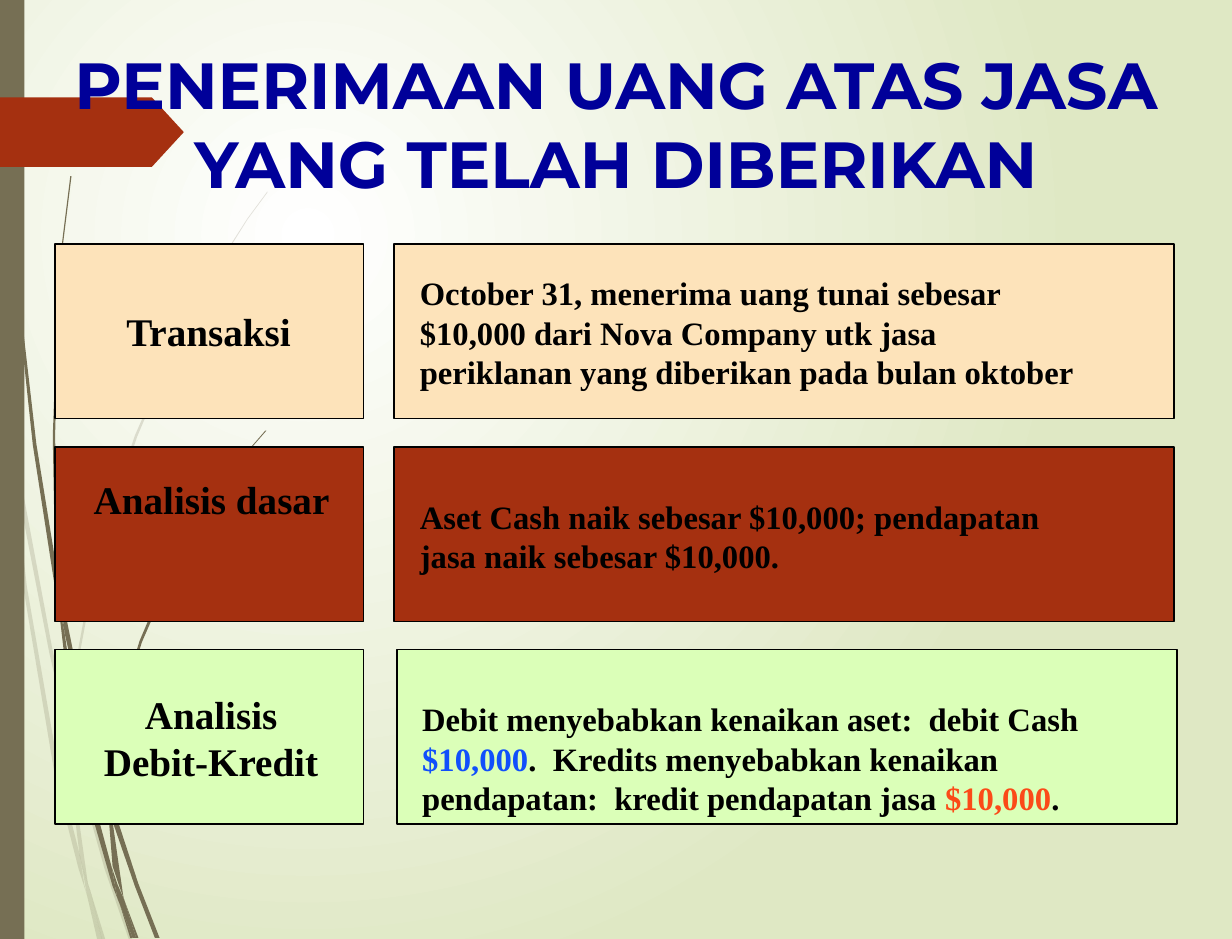
"""Build the slide on receiving cash for services already rendered."""
from lxml import etree
from pptx import Presentation
from pptx import util as u
from pptx.dml.color import RGBColor
from pptx.enum import shapes, text
from pptx.oxml import ns

WHITE = RGBColor(0xFF, 0xFF, 0xFF)
SAGE = RGBColor(0xDF, 0xE8, 0xC4)
OLIVE = RGBColor(0x76, 0x6F, 0x54)
RUST = RGBColor(0xA5, 0x30, 0x10)
NAVY = RGBColor(0x00, 0x00, 0x99)
BLACK = RGBColor(0x00, 0x00, 0x00)
CREAM = RGBColor(0xFD, 0xE3, 0xBA)
LIME = RGBColor(0xDB, 0xFF, 0xB8)
BLUE = RGBColor(0x11, 0x4F, 0xFB)
ORANGE = RGBColor(0xFB, 0x4A, 0x18)

TITLE = "PENERIMAAN UANG ATAS JASA YANG TELAH DIBERIKAN"
TITLE_FONT = {"name": "Montserrat", "size": u.Pt(40), "bold": True}
LABEL_FONT = {"name": "Times New Roman", "size": u.Pt(24), "bold": True}
BODY_FONT = {"name": "Times New Roman", "size": u.Pt(20), "bold": True}

ROWS = [
    {"fill": CREAM, "card_x": 8.53,
     "label": ["Transaksi"], "label_box": (2.46, 6.53, 4.11, 1.27),
     "body": [("October 31, menerima uang tunai sebesar $10,000 dari Nova Company utk jasa "
               "periklanan yang diberikan pada bulan oktober", BLACK)],
     "body_box": (8.84, 5.79, 15.04, 2.82)},
    {"fill": RUST, "card_x": 8.53,
     "label": ["Analisis dasar"], "label_box": (1.75, 10.16, 5.66, 1.27),
     "body": [("Aset Cash naik sebesar $10,000; pendapatan jasa naik sebesar $10,000.", BLACK)],
     "body_box": (8.84, 10.62, 15.29, 1.96)},
    {"fill": LIME, "card_x": 8.59,
     "label": ["Analisis", "Debit-Kredit"], "label_box": (1.98, 14.81, 5.18, 2.31),
     "body": [("Debit menyebabkan kenaikan aset:  debit Cash ", BLACK), ("$10,000", BLUE),
              (".  Kredits menyebabkan kenaikan pendapatan:  kredit pendapatan jasa ", BLACK),
              ("$10,000", ORANGE), (".", BLACK)],
     "body_box": (8.89, 15.01, 16.36, 2.82)},
]
ROW_TOP, ROW_STEP, ROW_H = 5.28, 4.39, 3.78
LABEL_X, LABEL_W, CARD_W = 1.19, 6.68, 16.89

WISP_UNIT = u.Cm(2.54) / 100
PALE_WISPS = [
    [(8, 373), (6, 343), (0, 300), (0, 319), (7, 367)],
    [(42, 556), (61, 639), (62, 625), (45, 555), (10, 368), (12, 401)],
    [(67, 647), (64, 635), (64, 651), (89, 740), (110, 801), (113, 801), (93, 738)],
    [(87, 801), (90, 801), (77, 759)],
    [(68, 728), (51, 661), (23, 500), (12, 401), (8, 373), (20, 501), (47, 662), (67, 740),
     (74, 762), (72, 754)],
    [(61, 639), (63, 689), (68, 729), (70, 738), (77, 759), (75, 753), (66, 689), (64, 651)],
    [(64, 623), (68, 557), (80, 493), (97, 432), (117, 372), (141, 315), (167, 262), (196, 211),
     (211, 187), (228, 164), (228, 163), (211, 186), (195, 211), (166, 261), (140, 314),
     (115, 371), (95, 431), (78, 492), (66, 557), (62, 623), (64, 635)],
    [(74, 762), (83, 801), (87, 801)],
    [(70, 738), (68, 728), (74, 762), (87, 801), (77, 759)],
]
DARK_WISPS = [
    [(6, 117), (14, 248), (28, 379), (48, 508), (49, 513), (48, 483), (31, 378), (16, 248),
     (6, 117), (4, 51), (3, 0), (2, 0), (3, 51)],
    [(76, 631), (92, 688), (92, 673), (80, 630), (65, 568), (52, 504), (55, 539)],
    [(98, 692), (95, 684), (96, 700), (115, 755), (132, 799), (136, 799), (118, 753)],
    [(95, 738), (85, 701), (63, 593), (55, 539), (49, 509), (59, 594), (81, 703), (96, 755),
     (102, 770), (100, 765)],
    [(52, 504), (50, 483), (47, 372), (50, 261), (54, 206), (61, 150), (60, 150), (53, 206),
     (49, 261), (45, 372), (47, 479)],
    [(116, 799), (118, 799), (106, 767)],
    [(49, 509), (55, 539), (52, 504), (48, 479)],
    [(96, 676), (99, 632), (108, 588), (121, 547), (138, 508), (157, 469), (178, 433), (201, 399),
     (213, 383), (227, 367), (226, 367), (213, 382), (201, 398), (177, 432), (155, 468),
     (136, 506), (119, 546), (106, 588), (96, 630), (92, 673), (96, 684)],
    [(102, 770), (111, 799), (113, 799)],
    [(92, 688), (96, 738), (101, 753), (106, 767), (105, 763), (96, 700), (94, 694)],
    [(100, 753), (95, 738), (100, 765), (102, 770), (113, 799), (116, 799), (106, 767)],
]


def cm_box(box):
    return [u.Cm(v) for v in box]


def paint(sp, color, line=None):
    sp.shadow.inherit = False
    sp.fill.solid()
    sp.fill.fore_color.rgb = color
    if line is None:
        sp.line.fill.background()
    else:
        sp.line.color.rgb = line
        sp.line.width = u.Pt(1)
    return sp


def add_box(s, box, color, line=None, kind=shapes.MSO_SHAPE.RECTANGLE):
    return paint(s.shapes.add_shape(kind, *cm_box(box)), color, line)


def add_wisp(s, points, alpha=None):
    fb = s.shapes.build_freeform(*points[0], scale=WISP_UNIT)
    fb.add_line_segments(points[1:], close=True)
    sp = paint(fb.convert_to_shape(), OLIVE)
    if alpha:
        clr = sp.element.spPr.find(".//" + ns.qn("a:srgbClr"))
        etree.SubElement(clr, ns.qn("a:alpha")).set("val", str(alpha * 1000))


def write(sp, paragraphs, font, align, wrap=True):
    tf = sp.text_frame
    tf.word_wrap = wrap
    tf.vertical_anchor = text.MSO_ANCHOR.TOP
    for i, runs in enumerate(paragraphs):
        p = tf.add_paragraph() if i else tf.paragraphs[0]
        p.alignment = align
        for words, color in runs:
            r = p.add_run()
            r.text = words
            r.font.color.rgb = color
            for key, value in font.items():
                setattr(r.font, key, value)


def set_background(s):
    fill = s.background.fill
    fill.gradient()
    for stop, pos, color in zip(fill.gradient_stops, (0, 1), (WHITE, SAGE)):
        stop.position = pos
        stop.color.rgb = color
    lin = s.element.find(".//" + ns.qn("a:lin"))
    glow = etree.Element(ns.qn("a:path"))
    glow.set("path", "circle")
    rect = etree.SubElement(glow, ns.qn("a:fillToRect"))
    for side, value in {"l": 50, "t": 50, "r": 100, "b": 100}.items():
        rect.set(side, str(value * 1000))
    lin.getparent().replace(lin, glow)


def main():
    prs = Presentation()
    prs.slide_width, prs.slide_height = u.Cm(26.67), u.Cm(20.32)
    s = prs.slides.add_slide(prs.slide_layouts[5])
    set_background(s)

    for points in PALE_WISPS:
        add_wisp(s, points, alpha=20)
    for points in DARK_WISPS:
        add_wisp(s, points)
    add_box(s, (0, 0, 0.53, 20.32), OLIVE)
    flag = add_box(s, (0, 2.11, 3.98, 1.5), RUST, kind=shapes.MSO_SHAPE.PENTAGON)
    flag.adjustments[0] = 0.46

    title = s.shapes.title
    s.shapes.element.append(title.element)
    title.left, title.top, title.width, title.height = cm_box((0, 0.84, 26.67, 3.66))
    write(title, [[(TITLE, NAVY)]], TITLE_FONT, text.PP_ALIGN.CENTER)

    for i, row in enumerate(ROWS):
        top = ROW_TOP + i * ROW_STEP
        add_box(s, (LABEL_X, top, LABEL_W, ROW_H), row["fill"], BLACK)
        add_box(s, (row["card_x"], top, CARD_W, ROW_H), row["fill"], BLACK)
        label = s.shapes.add_textbox(*cm_box(row["label_box"]))
        write(label, [[(line, BLACK)] for line in row["label"]], LABEL_FONT,
              text.PP_ALIGN.CENTER, wrap=False)
        body = s.shapes.add_textbox(*cm_box(row["body_box"]))
        write(body, [row["body"]], BODY_FONT, text.PP_ALIGN.LEFT)

    prs.save("out.pptx")


if __name__ == "__main__":
    main()
